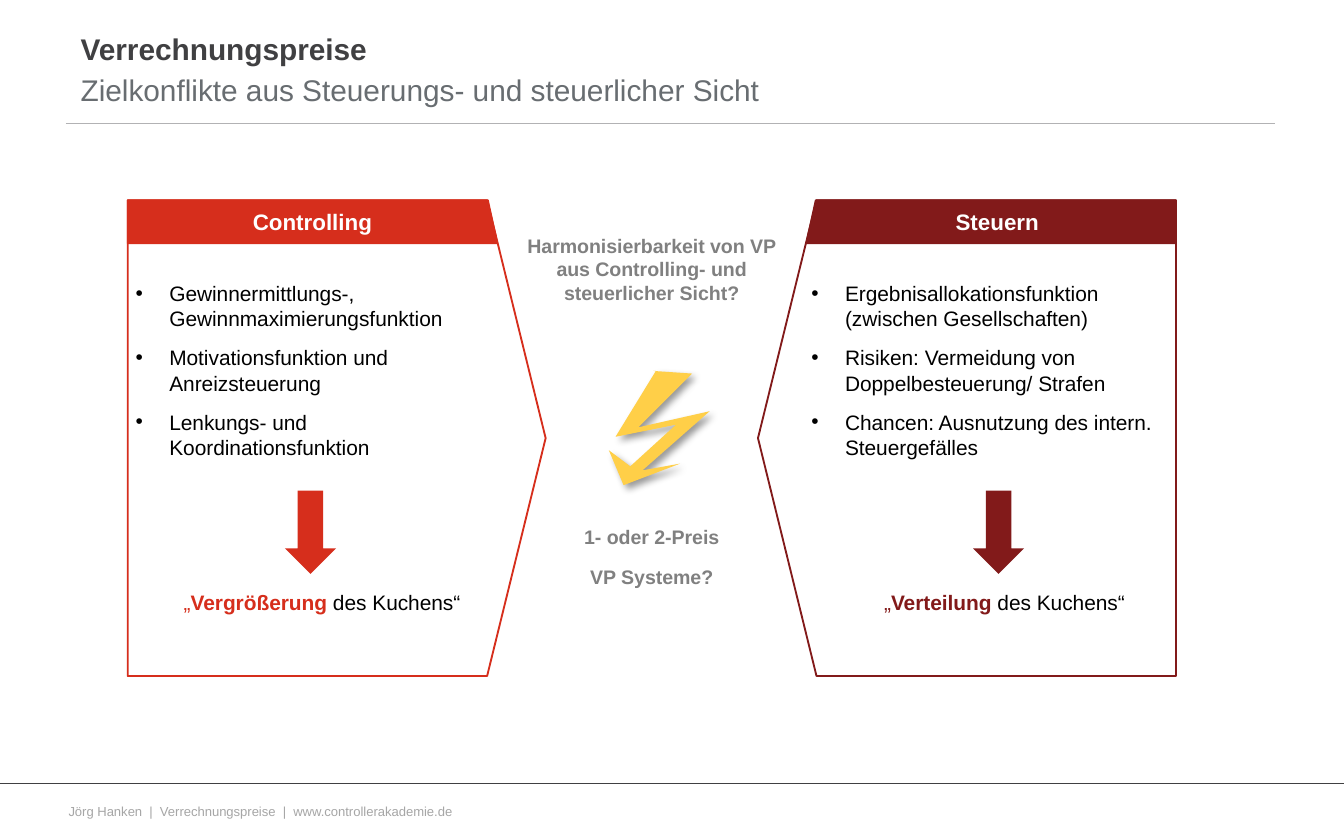
import pptx
import pptx.util
import pptx.dml.color
import pptx.enum.shapes
import pptx.enum.text
import pptx.oxml
import pptx.oxml.ns

Inches = pptx.util.Inches
Pt = pptx.util.Pt
Shape = pptx.enum.shapes.MSO_SHAPE
Align = pptx.enum.text.PP_ALIGN
Anchor = pptx.enum.text.MSO_ANCHOR
NS = pptx.oxml.ns.nsdecls("a")

COLORS = {
    "title": "404042", "sub": "686D71", "foot": "A6A6A6", "rule": "B2B2B4",
    "red": "D62E1C", "wine": "821A1A", "gold": "FFCF48", "gray": "808080",
    "black": "000000", "white": "FFFFFF",
}
BOLT = [(4.86, 2.76), (5.15, 2.78), (4.75, 3.18), (5.28, 3.06), (4.78, 3.5),
        (5.06, 3.45), (4.64, 3.61), (4.53, 3.35), (4.69, 3.47), (5.03, 3.16),
        (4.58, 3.25), (4.88, 2.76)]


def rgb(name):
    return pptx.dml.color.RGBColor.from_string(COLORS[name])


def add_run(para, text, size, color, bold=False):
    run = para.add_run()
    run.text = text
    font = run.font
    font.name = "Arial"
    font.size = Pt(size)
    font.bold = bold
    font.color.rgb = rgb(color)


def set_frame(shape, insets, anchor=Anchor.TOP, wrap=True):
    """Set insets (left, top, right, bottom) and return the first paragraph."""
    frame = shape.text_frame
    frame.word_wrap = wrap
    frame.auto_size = pptx.enum.text.MSO_AUTO_SIZE.NONE
    frame.vertical_anchor = anchor
    (frame.margin_left, frame.margin_top,
     frame.margin_right, frame.margin_bottom) = map(Inches, insets)
    return frame.paragraphs[0]


def set_list(para, mark=None):
    """Give the paragraph a hanging bullet, or none."""
    props = para._p.get_or_add_pPr()
    hang = Inches(0.25) if mark else 0
    props.set("marL", str(hang))
    props.set("indent", str(-hang))
    if mark:
        props.append(pptx.oxml.parse_xml(
            f'<a:buClr {NS}><a:srgbClr val="{COLORS["black"]}"/></a:buClr>'))
        props.append(pptx.oxml.parse_xml(f'<a:buFont {NS} typeface="Arial"/>'))
        props.append(pptx.oxml.parse_xml(f'<a:buChar {NS} char="{mark}"/>'))
    else:
        props.append(pptx.oxml.parse_xml(f"<a:buNone {NS}/>"))


def paint(shape, fill, line=None):
    shape.shadow.inherit = False
    shape.fill.solid()
    shape.fill.fore_color.rgb = rgb(fill)
    if line:
        shape.line.color.rgb = rgb(line)
        shape.line.width = Pt(1)
    else:
        shape.line.fill.background()


def add_shape(slide, kind, box, fill, line=None):
    shape = slide.shapes.add_shape(kind, *map(Inches, box))
    paint(shape, fill, line)
    return shape


def add_form(slide, points, fill, line=None):
    points = [(Inches(x), Inches(y)) for x, y in points]
    form = slide.shapes.build_freeform(*points[0])
    form.add_line_segments(points[1:], close=True)
    shape = form.convert_to_shape()
    paint(shape, fill, line)
    return shape


def add_rule(slide, left, right, y, color):
    rule = slide.shapes.add_connector(
        pptx.enum.shapes.MSO_CONNECTOR.STRAIGHT,
        Inches(left), Inches(y), Inches(right), Inches(y))
    rule.line.color.rgb = rgb(color)
    rule.line.width = Pt(0.25)
    rule._element.spPr.append(pptx.oxml.parse_xml(f"<a:effectLst {NS}/>"))


def fill_holder(holder, box, text, color, top, bold):
    holder.left, holder.top, holder.width, holder.height = map(Inches, box)
    para = set_frame(holder, (0, top, 0.1, 0))
    set_list(para)
    para.alignment = Align.LEFT
    para.space_before = Pt(0)
    add_run(para, text, 16, color, bold)


def add_panel(slide, left, color, head, points, goal, flip=False):
    """Draw one arrow-sided panel; flip makes it point to the left."""
    top, width, height = 1.49, 3.11, 3.54
    panel = add_shape(slide, Shape.PENTAGON, (left, top, width, height),
                      "white", color)
    panel.adjustments[0] = 0.14
    if flip:
        panel._element.spPr.xfrm.set("flipH", "1")
    para = set_frame(panel, (0.18 if flip else 0.06, 0.6, 0.06, 0.03))
    for point in points:
        set_list(para, "•")
        para.alignment = Align.LEFT
        para.space_after = Pt(7.5)
        add_run(para, point, 11.2, "black")
        para = panel.text_frame.add_paragraph()
    set_list(para)
    para._p.pPr.set("marL", str(Inches(0.22 if flip else 0)))
    para.alignment = Align.CENTER
    para.space_before = Pt(62)
    add_run(para, "„", 11.2, color)
    add_run(para, goal, 11.2, color, True)
    add_run(para, " des Kuchens“", 11.2, "black")

    def side(x):
        return left + width - x if flip else left + x

    band = add_form(slide, [(side(0), top), (side(2.68), top),
                            (side(2.75), top + 0.32), (side(0), top + 0.32)],
                    color, color)
    para = set_frame(band, (0.15 if flip else 0.06, 0.03, 0.06, 0.03),
                     Anchor.MIDDLE)
    para.alignment = Align.CENTER
    add_run(para, head, 12, "white", True)
    mid = side(1.36) if not flip else side(1.32)
    add_shape(slide, Shape.DOWN_ARROW, (mid - 0.19, 3.65, 0.38, 0.62), color)


def add_middle(slide):
    box = slide.shapes.add_textbox(*map(Inches, (3.87, 1.74, 1.96, 2.65)))
    para = set_frame(box, (0, 0, 0, 0))
    lines = [("Harmonisierbarkeit von VP aus Controlling- und "
              "steuerlicher Sicht?", 0),
             ("1- oder 2-Preis", 118), ("VP Systeme?", 9)]
    for i, (text, gap) in enumerate(lines):
        if i:
            para = box.text_frame.add_paragraph()
            para.space_before = Pt(gap)
        para.alignment = Align.CENTER
        add_run(para, text, 10.5, "gray", True)
    bolt = add_form(slide, BOLT, "gold")
    bolt._element.spPr.find(pptx.oxml.ns.qn("a:effectLst")).append(
        pptx.oxml.parse_xml(
            f'<a:outerShdw {NS} blurRad="{Pt(4)}" dist="{Pt(3)}" dir="2700000">'
            f'<a:srgbClr val="{COLORS["black"]}"><a:alpha val="40000"/>'
            '</a:srgbClr></a:outerShdw>'))


def add_foot(slide):
    add_rule(slide, 0, 10, 5.83, "title")
    box = slide.shapes.add_textbox(*map(Inches, (0.51, 5.92, 2.91, 0.24)))
    para = set_frame(box, (0, 0, 0, 0), Anchor.MIDDLE, False)
    add_run(para, "Jörg Hanken  |  Verrechnungspreise  |  "
            "www.controllerakademie.de", 7, "foot")


def main():
    deck = pptx.Presentation()
    deck.slide_width, deck.slide_height = Inches(10), Inches(6.25)
    slide = deck.slides.add_slide(deck.slide_layouts[1])
    fill_holder(slide.shapes.title, (0.6, 0.18, 8.23, 0.3),
                "Verrechnungspreise", "title", 0.05, True)
    fill_holder(slide.placeholders[1], (0.6, 0.53, 8.23, 0.31),
                "Zielkonflikte aus Steuerungs- und steuerlicher Sicht",
                "sub", 0, False)
    add_rule(slide, 0.49, 9.49, 0.92, "rule")
    add_foot(slide)
    add_middle(slide)
    add_panel(slide, 0.95, "red", "Controlling",
              ["Gewinnermittlungs-, Gewinnmaximierungsfunktion",
               "Motivationsfunktion und Anreizsteuerung",
               "Lenkungs- und Koordinationsfunktion"], "Vergrößerung")
    add_panel(slide, 5.64, "wine", "Steuern",
              ["Ergebnisallokationsfunktion (zwischen Gesellschaften)",
               "Risiken: Vermeidung von Doppelbesteuerung/ Strafen",
               "Chancen: Ausnutzung des intern. Steuergefälles"],
              "Verteilung", True)
    deck.save("out.pptx")


if __name__ == "__main__":
    main()
